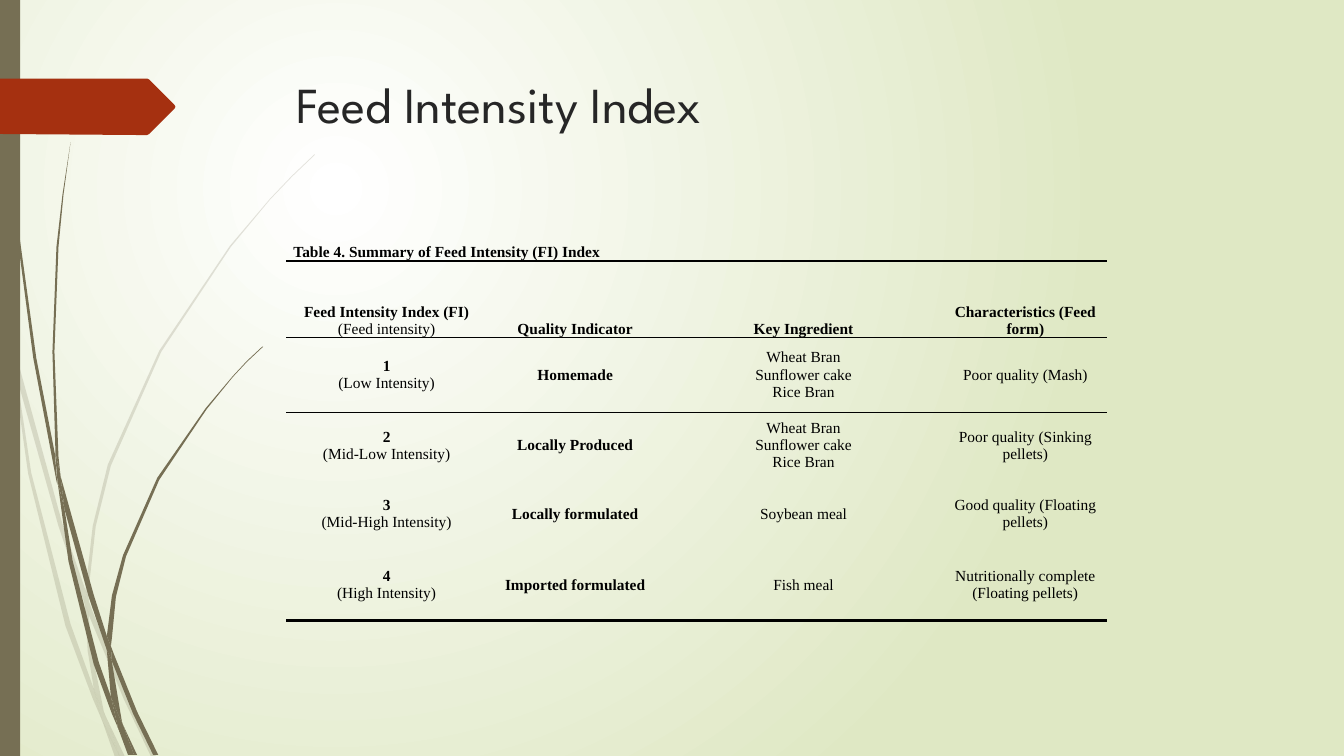
from lxml import etree
from pptx import Presentation
from pptx.dml.color import RGBColor
from pptx.enum.shapes import MSO_SHAPE
from pptx.enum.text import MSO_ANCHOR, PP_ALIGN
from pptx.oxml import parse_xml
from pptx.oxml.ns import nsdecls, qn
from pptx.util import Inches, Pt

RECTANGLE = MSO_SHAPE.RECTANGLE
TOP, MIDDLE, BOTTOM = MSO_ANCHOR.TOP, MSO_ANCHOR.MIDDLE, MSO_ANCHOR.BOTTOM
LEFT, CENTER = PP_ALIGN.LEFT, PP_ALIGN.CENTER

WHITE = RGBColor(0xFF, 0xFF, 0xFF)
PALE_GREEN = RGBColor(0xDF, 0xE8, 0xC4)
OLIVE = RGBColor(0x76, 0x6F, 0x54)
RUST = RGBColor(0xA5, 0x30, 0x10)
CHARCOAL = RGBColor(0x26, 0x26, 0x26)
BLACK = RGBColor(0, 0, 0)
NO_STYLE = "{2D5ABB26-0587-4C30-8999-92F81FD0307C}"

# Grass pieces: corner points in inches
PALE_GRASS = [
    [(0.11, 3.5), (0.09, 3.22), (0, 2.82), (0, 2.99), (0.1, 3.44)],
    [(0.58, 5.22), (0.84, 5.99), (0.85, 5.86), (0.62, 5.2), (0.14, 3.45), (0.17, 3.76)],
    [(0.92, 6.07), (0.88, 5.96), (0.88, 6.1), (1.23, 6.94), (1.5, 7.51), (1.55, 7.51),
     (1.27, 6.92)],
    [(1.19, 7.51), (1.24, 7.51), (1.05, 7.11)],
    [(0.93, 6.83), (0.7, 6.19), (0.31, 4.69), (0.17, 3.76), (0.11, 3.5), (0.28, 4.7),
     (0.65, 6.21), (0.92, 6.93), (1.01, 7.14), (0.99, 7.07)],
    [(0.84, 5.99), (0.87, 6.46), (0.93, 6.83), (0.96, 6.92), (1.05, 7.11), (1.03, 7.06),
     (0.91, 6.46), (0.88, 6.1), (0.88, 6.08)],
    [(0.88, 5.84), (0.95, 5.22), (1.1, 4.62), (1.6, 3.49), (2.29, 2.45), (2.68, 1.98),
     (2.9, 1.75), (3.12, 1.54), (3.12, 1.53), (2.89, 1.75), (2.68, 1.97), (2.28, 2.44),
     (1.58, 3.48), (1.07, 4.61), (0.92, 5.22), (0.85, 5.84), (0.85, 5.86), (0.88, 5.96)],
    [(1.01, 7.14), (1.14, 7.51), (1.19, 7.51)],
    [(0.88, 6.08), (0.88, 6.1), (0.88, 5.96), (0.85, 5.86), (0.84, 5.99)],
    [(0.96, 6.92), (0.93, 6.83), (0.99, 7.07), (1.01, 7.14), (1.19, 7.51), (1.05, 7.11)],
]
DARK_GRASS = [
    [(0.07, 1.1), (0.17, 2.33), (0.33, 3.55), (0.56, 4.77), (0.57, 4.81), (0.55, 4.57),
     (0.55, 4.53), (0.36, 3.55), (0.19, 2.32), (0.08, 1.09), (0.05, 0.48), (0.04, 0),
     (0.03, 0), (0.04, 0.48)],
    [(0.88, 5.92), (1.06, 6.45), (1.06, 6.33), (1.06, 6.31), (0.93, 5.9), (0.6, 4.72),
     (0.64, 5.05)],
    [(1.13, 6.49), (1.1, 6.41), (1.11, 6.56), (1.32, 7.08), (1.52, 7.49), (1.57, 7.49),
     (1.36, 7.06)],
    [(1.1, 6.91), (0.98, 6.57), (0.72, 5.56), (0.64, 5.05), (0.57, 4.77), (0.68, 5.57),
     (0.93, 6.59), (1.11, 7.08), (1.17, 7.22), (1.16, 7.17)],
    [(0.6, 4.72), (0.58, 4.53), (0.54, 3.49), (0.58, 2.45), (0.63, 1.93), (0.7, 1.41),
     (0.62, 1.93), (0.56, 2.45), (0.52, 3.49), (0.55, 4.49)],
    [(1.33, 7.49), (1.36, 7.49), (1.22, 7.19)],
    [(0.57, 4.77), (0.64, 5.05), (0.6, 4.72), (0.55, 4.49), (0.55, 4.53)],
    [(1.11, 6.33), (1.15, 5.92), (1.25, 5.52), (1.58, 4.76), (2.05, 4.06), (2.31, 3.74),
     (2.45, 3.59), (2.61, 3.44), (2.6, 3.44), (2.45, 3.58), (2.31, 3.73), (2.04, 4.05),
     (1.56, 4.74), (1.22, 5.51), (1.11, 5.91), (1.06, 6.31), (1.1, 6.41)],
    [(1.17, 7.22), (1.27, 7.49), (1.31, 7.49)],
    [(1.06, 6.45), (1.1, 6.91), (1.16, 7.06), (1.22, 7.19), (1.21, 7.16), (1.11, 6.56),
     (1.09, 6.51)],
    [(1.06, 6.45), (1.09, 6.51), (1.11, 6.56), (1.1, 6.41), (1.06, 6.31), (1.06, 6.33)],
    [(1.16, 7.06), (1.1, 6.91), (1.16, 7.17), (1.17, 7.22), (1.3, 7.49), (1.33, 7.49),
     (1.22, 7.19)],
]
ARROW_TAB = [(0, 0.78), (1.46, 0.78), (1.48, 0.79), (1.73, 1.04), (1.74, 1.06),
             (1.73, 1.08), (1.48, 1.33), (1.46, 1.34), (1.36, 1.34), (0, 1.33)]

COLUMN_WIDTHS = [1.99, 1.75, 2.78, 1.62]
ROW_HEIGHTS = [0.33, 0.76, 0.74, 0.66, 0.7, 0.71]
FEED_ROWS = [
    ["Table 4. Summary of Feed Intensity (FI) Index", "", "", ""],
    ["Feed Intensity Index (FI)\n(Feed intensity)", "Quality Indicator", "Key Ingredient",
     "Characteristics (Feed form)"],
    ["1\n(Low Intensity)", "Homemade", "Wheat Bran\nSunflower cake\nRice Bran",
     "Poor quality (Mash)"],
    ["2\n(Mid-Low Intensity)", "Locally Produced", "Wheat Bran\nSunflower cake\nRice Bran",
     "Poor quality (Sinking pellets)"],
    ["3\n(Mid-High Intensity)", "Locally formulated", "Soybean meal",
     "Good quality (Floating pellets)"],
    ["4\n(High Intensity)", "Imported formulated", "Fish meal",
     "Nutritionally complete (Floating pellets)"],
]
# Row: (rule above, rule below) in points
ROW_RULES = {0: (0, 2.25), 1: (2.25, 1), 2: (1, 0), 5: (0, 2.25)}


def style_shape(shape, color):
    shape.shadow.inherit = False
    shape.fill.solid()
    shape.fill.fore_color.rgb = color
    shape.line.fill.background()


def draw_outline(shapes, points, color):
    corners = [(Inches(x), Inches(y)) for x, y in points]
    builder = shapes.build_freeform(*corners[0])
    builder.add_line_segments(corners[1:], close=True)
    shape = builder.convert_to_shape()
    style_shape(shape, color)
    return shape


presentation = Presentation()
presentation.slide_width = Inches(13.33)
presentation.slide_height = Inches(7.5)
slide = presentation.slides.add_slide(presentation.slide_layouts[5])

# Radial background
background = slide.background.fill
background.gradient()
for stop, color in zip(background.gradient_stops, (WHITE, PALE_GREEN)):
    stop.color.rgb = color
linear = next(slide.element.iter(qn("a:lin")))
linear.getparent().replace(linear, parse_xml(
    f'<a:path {nsdecls("a")} path="circle">'
    '<a:fillToRect l="50000" t="50000" r="100000" b="100000"/></a:path>'))

# Grass, pale behind dark
for pieces, opacity in ((PALE_GRASS, 20000), (DARK_GRASS, None)):
    grass = slide.shapes.add_group_shape()
    for points in pieces:
        blade = draw_outline(grass.shapes, points, OLIVE)
        if opacity:
            fill_color = blade.element.spPr.find(qn("a:solidFill"))[0]
            etree.SubElement(fill_color, qn("a:alpha")).set("val", str(opacity))

# Side bar and arrow tab
side_bar = slide.shapes.add_shape(RECTANGLE, 0, 0, Inches(0.2), Inches(7.5))
style_shape(side_bar, OLIVE)
draw_outline(slide.shapes, ARROW_TAB, RUST)

# Title
title = slide.shapes.title
title.left, title.top = Inches(2.84), Inches(0.68)
title.width, title.height = Inches(9.75), Inches(1.4)
title.text_frame.vertical_anchor = TOP
title.text_frame.word_wrap = True
paragraph = title.text_frame.paragraphs[0]
paragraph.alignment = LEFT
run = paragraph.add_run()
run.text = "Feed Intensity Index"
run.font.name = "League Spartan"
run.font.size = Pt(36)
run.font.color.rgb = CHARCOAL

# Feed table
frame = slide.shapes.add_table(len(ROW_HEIGHTS), len(COLUMN_WIDTHS), Inches(2.84),
                               Inches(2.26), Inches(8.14), Inches(3.9))
table = frame.table
table.first_row = table.horz_banding = False
table._tbl.tblPr.find(qn("a:tableStyleId")).text = NO_STYLE
for column, width in zip(table.columns, COLUMN_WIDTHS):
    column.width = Inches(width)
for row, height in zip(table.rows, ROW_HEIGHTS):
    row.height = Inches(height)
table.cell(0, 0).merge(table.cell(0, 3))

for row_index, texts in enumerate(FEED_ROWS):
    for column_index, text in enumerate(texts):
        cell = table.cell(row_index, column_index)
        cell.margin_left = cell.margin_right = Inches(0.07)
        cell.margin_top = cell.margin_bottom = 0
        cell.vertical_anchor = BOTTOM if row_index < 2 else MIDDLE
        properties = cell._tc.get_or_add_tcPr()
        for edge, width in zip(("lnT", "lnB"), ROW_RULES.get(row_index, (0, 0))):
            if width:
                properties.append(parse_xml(
                    f'<a:{edge} {nsdecls("a")} w="{Pt(width)}"><a:solidFill>'
                    f'<a:srgbClr val="{BLACK}"/></a:solidFill></a:{edge}>'))
        cell.fill.background()
        if not text:
            continue
        for line_index, line in enumerate(text.split("\n")):
            text_frame = cell.text_frame
            paragraph = text_frame.add_paragraph() if line_index else text_frame.paragraphs[0]
            paragraph.alignment = CENTER if row_index else LEFT
            run = paragraph.add_run()
            run.text = line
            run.font.name = "Times New Roman"
            run.font.size = Pt(11)
            run.font.color.rgb = BLACK
            run.font.bold = (row_index < 2 or column_index < 2) and not line.startswith("(")

presentation.save("out.pptx")
